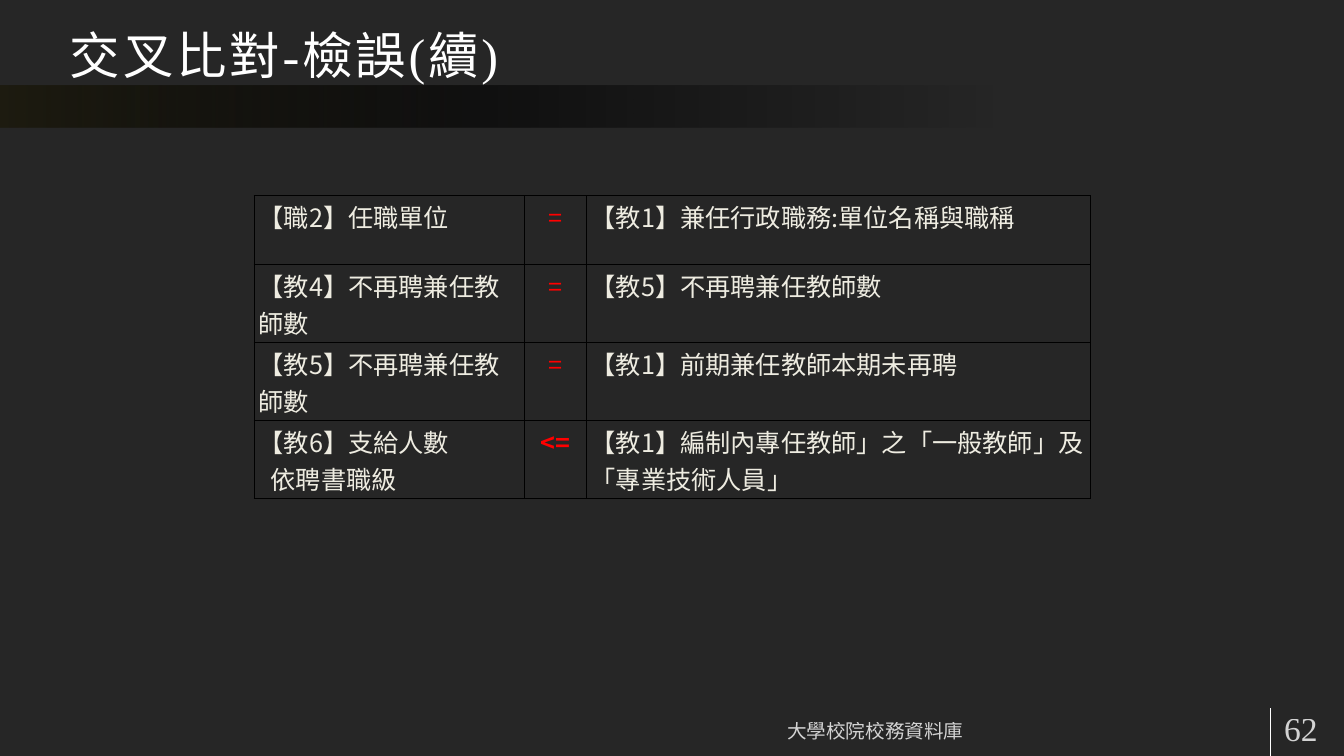
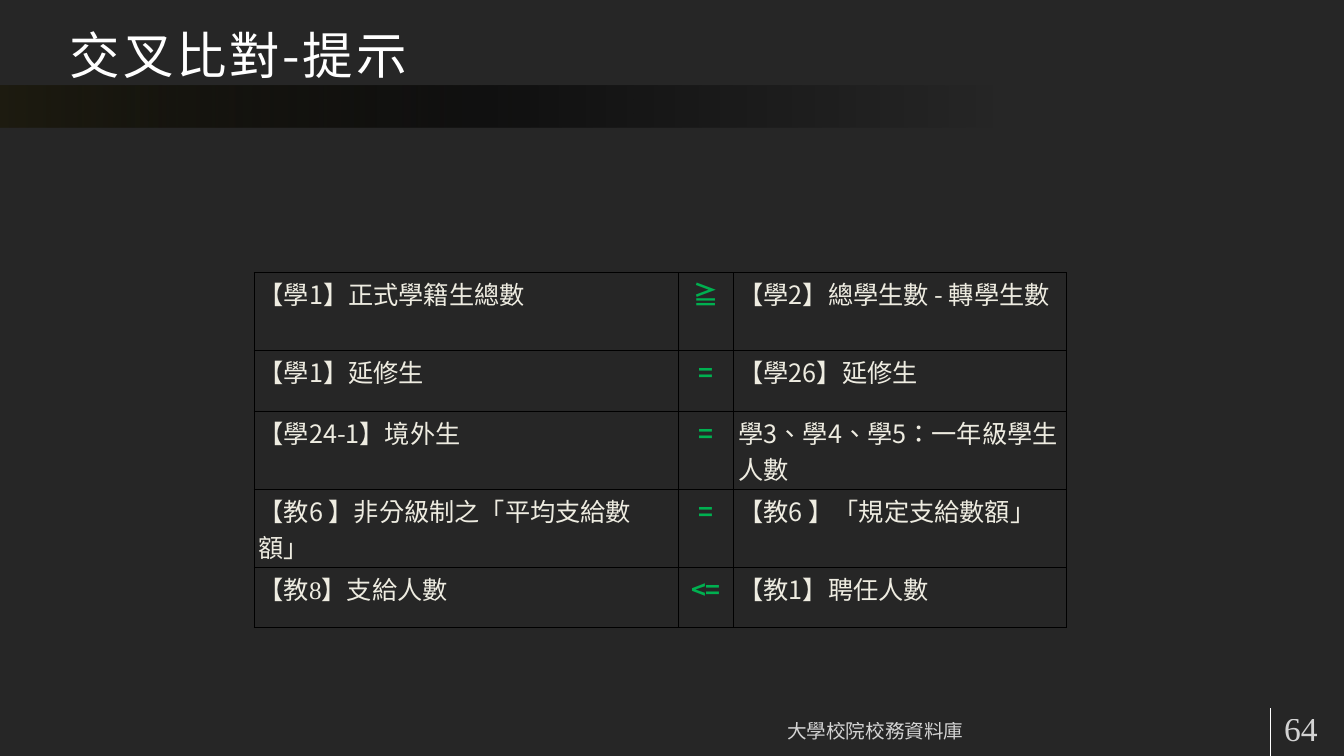
from lxml import etree
from pptx import Presentation
from pptx.dml.color import RGBColor
from pptx.enum.shapes import MSO_CONNECTOR, MSO_SHAPE
from pptx.enum.text import MSO_ANCHOR, PP_ALIGN
from pptx.oxml import parse_xml
from pptx.oxml.ns import nsdecls, qn
from pptx.util import Pt

PX = 9144  # 100 px to the inch
LEFT, CENTER = PP_ALIGN.LEFT, PP_ALIGN.CENTER
BOTTOM, MIDDLE = MSO_ANCHOR.BOTTOM, MSO_ANCHOR.MIDDLE
RECTANGLE, STRAIGHT = MSO_SHAPE.RECTANGLE, MSO_CONNECTOR.STRAIGHT

SERIF, SANS = "Times New Roman", "Noto Sans CJK SC"
COLORS = {
    "background": "262626",
    "band": "1E1C11",
    "black": "000000",
    "white": "FFFFFF",
    "cell": "EEECE1",
    "error": "FF0000",
    "hint": "00B050",
}
BAND_STOPS = [(0, "band", 100), (39, "black", 54), (74, "black", 0)]
FOOTER = "大學校院校務資料庫"
SECOND_LINE_INDENT = 18
TWO_LINES = 116  # height of a row whose text takes two lines

# Each row: left side, operator, right side, operator is bold, font of the left side
SLIDES = [
    {
        "title": "交叉比對-檢誤(續)", "title_font": SERIF, "number": "62",
        "operator_color": "error", "top": 291,
        "columns": [403, 91, 751],
        "row_heights": [103, TWO_LINES, TWO_LINES, TWO_LINES],
        "rows": [
            ("【職2】任職單位", "=", "【教1】兼任行政職務:單位名稱與職稱", False, SANS),
            ("【教4】不再聘兼任教師數", "=", "【教5】不再聘兼任教師數", False, SANS),
            ("【教5】不再聘兼任教師數", "=", "【教1】前期兼任教師本期未再聘", False, SANS),
            ("【教6】支給人數\n依聘書職級", "<=",
             "【教1】編制內專任教師」之「一般教師」及「專業技術人員」", True, SANS),
        ],
    },
    {
        "title": "交叉比對-提示", "title_font": SANS, "number": "64",
        "operator_color": "hint", "top": 406,
        "columns": [631, 83, 495],
        "row_heights": [TWO_LINES, 90, TWO_LINES, TWO_LINES, 90],
        "rows": [
            ("【學1】正式學籍生總數", "≧", "【學2】總學生數 - 轉學生數", True, SANS),
            ("【學1】延修生", "=", "【學26】延修生", True, SANS),
            ("【學24-1】境外生", "=", "學3、學4、學5：一年級學生人數", True, SANS),
            ("【教6 】非分級制之「平均支給數額」", "=", "【教6 】「規定支給數額」", True, SANS),
            ("【教8】支給人數", "<=", "【教1】聘任人數", True, SERIF),
        ],
    },
]


def add_run(paragraph, text, size, font, color, bold=False, alpha=100, spacing=0):
    run = paragraph.add_run()
    run.text = text
    run.font.size = Pt(size)
    run.font.name = font
    run.font.bold = bold
    run.font.color.rgb = RGBColor.from_string(COLORS[color])
    properties = run.font._element
    properties.set("lang", "zh-TW")
    etree.SubElement(properties, qn("a:ea")).set("typeface", SANS)
    if spacing:
        properties.set("spc", str(spacing * 100))
    if alpha < 100:
        color_element = properties.find(".//" + qn("a:srgbClr"))
        etree.SubElement(color_element, qn("a:alpha")).set("val", str(alpha * 1000))


def add_text(slide, box, anchor, alignment, text, size, font, **style):
    shape = slide.shapes.add_textbox(*(length * PX for length in box))
    frame = shape.text_frame
    frame.word_wrap = True
    frame.vertical_anchor = anchor
    frame.margin_left = frame.margin_right = 18 * PX
    frame.margin_top = frame.margin_bottom = 9 * PX
    paragraph = frame.paragraphs[0]
    paragraph.alignment = alignment
    add_run(paragraph, text, size, font, "white", **style)


presentation = Presentation()
presentation.slide_width = 2000 * PX
presentation.slide_height = 1125 * PX

for content in SLIDES:
    slide = presentation.slides.add_slide(presentation.slide_layouts[6])
    slide.background.fill.solid()
    slide.background.fill.fore_color.rgb = RGBColor.from_string(COLORS["background"])

    # Fading band under the title
    band = slide.shapes.add_shape(RECTANGLE, 0, 127 * PX, 2000 * PX, 63 * PX)
    band.shadow.inherit = False
    band.line.fill.background()
    band.fill.gradient()
    band.fill.gradient_angle = 0
    stop_list = band._element.spPr.find(".//" + qn("a:gsLst"))
    stop_list.clear()
    for position, color, alpha in BAND_STOPS:
        stop = etree.SubElement(stop_list, qn("a:gs"), pos=str(position * 1000))
        stop_color = etree.SubElement(stop, qn("a:srgbClr"), val=COLORS[color])
        etree.SubElement(stop_color, qn("a:alpha"), val=str(alpha * 1000))

    # Rule beside the slide number
    rule = slide.shapes.add_connector(STRAIGHT, 1890 * PX, 1054 * PX, 1890 * PX, 1125 * PX)
    rule.line.width = Pt(0.75)
    rule.line.color.rgb = RGBColor.from_string(COLORS["white"])
    etree.SubElement(rule._element.spPr, qn("a:effectLst"))

    add_text(slide, (86, 0, 1800, 135), BOTTOM, LEFT,
             content["title"], 54, content["title_font"], spacing=3)
    add_text(slide, (716, 1054, 1173, 60), BOTTOM, CENTER, FOOTER, 21, SERIF, alpha=80)
    add_text(slide, (1893, 1054, 115, 60), MIDDLE, LEFT,
             content["number"], 36, SERIF, alpha=80)

    # Comparison table
    columns, heights = content["columns"], content["row_heights"]
    table = slide.shapes.add_table(
        len(heights), len(columns), 378 * PX, content["top"] * PX,
        sum(columns) * PX, sum(heights) * PX).table
    table.first_row = table.horz_banding = False
    for column, width in zip(table.columns, columns):
        column.width = width * PX
    for row, height in zip(table.rows, heights):
        row.height = height * PX

    for row, (left, operator, right, bold, left_font) in zip(table.rows, content["rows"]):
        styles = [
            (left, left_font, "cell", False, LEFT),
            (operator, SANS, content["operator_color"], bold, CENTER),
            (right, SANS, "cell", False, LEFT),
        ]
        for cell, (text, font, color, is_bold, alignment) in zip(row.cells, styles):
            cell.margin_left = cell.margin_right = 7 * PX
            cell.margin_top = cell.margin_bottom = 4 * PX
            cell_properties = cell._tc.get_or_add_tcPr()
            for side in ("lnL", "lnR", "lnT", "lnB"):
                cell_properties.append(parse_xml(
                    f'<a:{side} {nsdecls("a")} w="{Pt(1)}"><a:solidFill>'
                    f'<a:srgbClr val="{COLORS["black"]}"/></a:solidFill></a:{side}>'))
            cell.fill.background()

            for index, line in enumerate(text.split("\n")):
                frame = cell.text_frame
                paragraph = frame.add_paragraph() if index else frame.paragraphs[0]
                paragraph.alignment = alignment
                if index:
                    paragraph._p.get_or_add_pPr().set("marL", str(SECOND_LINE_INDENT * PX))
                add_run(paragraph, line, 27, font, color, bold=is_bold)

presentation.save("out.pptx")
